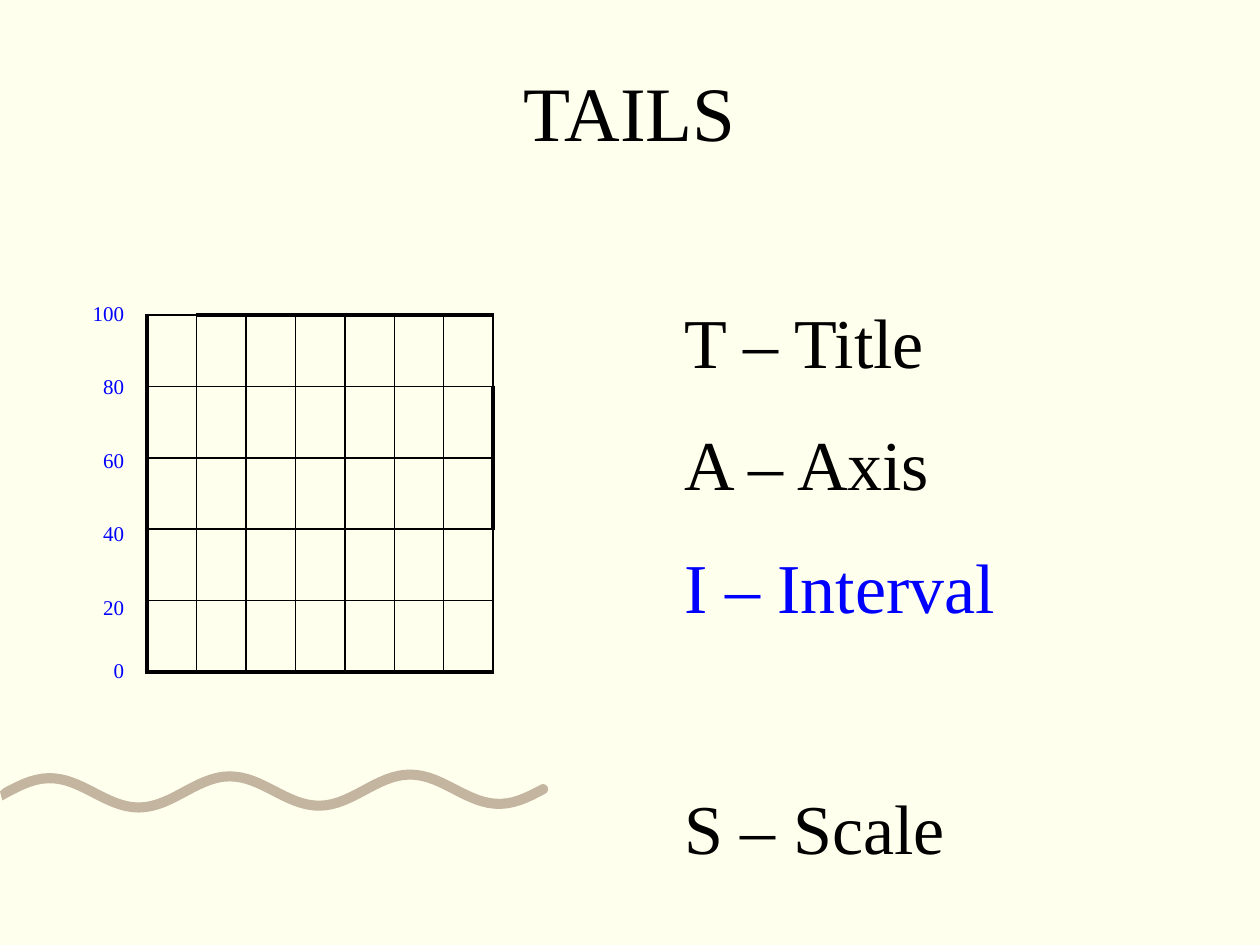
import math
from dataclasses import dataclass

from lxml import etree
from pptx import Presentation
from pptx.dml.color import RGBColor
from pptx.enum.text import MSO_ANCHOR, PP_ALIGN
from pptx.oxml.ns import qn
from pptx.util import Inches, Pt

CENTER, RIGHT = PP_ALIGN.CENTER, PP_ALIGN.RIGHT
MIDDLE = MSO_ANCHOR.MIDDLE


@dataclass(frozen=True)
class Theme:
    font: str = "Times New Roman"
    paper: str = "FFFFEE"
    ink: str = "000000"
    accent: str = "0000FF"
    wave: str = "C3B59F"
    title: int = 44
    body: int = 40
    label: int = 12
    thin: float = 1
    thick: float = 2.25


theme = Theme()
prs = Presentation()
prs.slide_width, prs.slide_height = Inches(10), Inches(7.5)
COLUMN, ROW = prs.slide_width / 120, prs.slide_height / 90


def grid(left, top, width, height):
    return (round(left * COLUMN), round(top * ROW),
            round(width * COLUMN), round(height * ROW))


def style(paragraph, size, color):
    paragraph.font.name = theme.font
    paragraph.font.size = Pt(size)
    paragraph.font.color.rgb = RGBColor.from_string(color)


slide = prs.slides.add_slide(prs.slide_layouts[5])
slide.background.fill.solid()
slide.background.fill.fore_color.rgb = RGBColor.from_string(theme.paper)

title = slide.shapes.title
title.left, title.top, title.width, title.height = grid(9, 3, 102, 15)
title.text_frame.text = "TAILS"
title.text_frame.vertical_anchor = MIDDLE
title.text_frame.paragraphs[0].alignment = CENTER
style(title.text_frame.paragraphs[0], theme.title, theme.ink)

CREST, PERIOD, SWING, HALF_BAND, WAVE_END = 0.39, 1.43, 0.12, 0.04, 4.31
upper, lower = [], []
STEPS = 90
for step in range(STEPS + 1):
    x = WAVE_END * step / STEPS
    phase = math.tau * (x - CREST) / PERIOD
    y = 6.3 - 0.01 * x - SWING * math.cos(phase)
    slope = math.atan(SWING * math.tau / PERIOD * math.sin(phase))
    dx, dy = HALF_BAND * math.sin(slope), HALF_BAND * math.cos(slope)
    upper.append((max(0, x + dx), y - dy))
    lower.append((max(0, x - dx), y + dy))
cap = [(x + HALF_BAND * math.cos(slope + turn), y + HALF_BAND * math.sin(slope + turn))
       for turn in (math.pi * (i / 8 - 0.5) for i in range(1, 8))]
outline = [(Inches(px), Inches(py)) for px, py in upper + cap + lower[::-1]]
builder = slide.shapes.build_freeform(*outline[0])
builder.add_line_segments(outline[1:], close=True)
wave = builder.convert_to_shape()
wave.shadow.inherit = False
wave.fill.solid()
wave.fill.fore_color.rgb = RGBColor.from_string(theme.wave)
wave.line.fill.background()

LINE_GAP, SKIPPED_LINE = 22, 68
entries = [
    ("T – Title", theme.ink, 0),
    ("A – Axis", theme.ink, LINE_GAP),
    ("I – Interval", theme.accent, LINE_GAP),
    ("S – Scale", theme.ink, LINE_GAP + SKIPPED_LINE),
]
acronym = slide.shapes.add_textbox(*grid(64, 27.8, 49, 57)).text_frame
acronym.word_wrap = True
for index, (text, color, gap) in enumerate(entries):
    paragraph = acronym.add_paragraph() if index else acronym.paragraphs[0]
    paragraph.text = text
    paragraph.space_before = Pt(gap)
    style(paragraph, theme.body, color)

GRAPH_ROWS, GRAPH_COLUMNS = 5, 7
graph = slide.shapes.add_table(GRAPH_ROWS, GRAPH_COLUMNS, *grid(14, 30, 33, 34)).table
graph.first_row = graph.horz_banding = False
for r in range(GRAPH_ROWS):
    for c in range(GRAPH_COLUMNS):
        cell = graph.cell(r, c)
        cell.fill.background()
        heavy = {
            "a:lnL": c == 0,
            "a:lnR": c == GRAPH_COLUMNS - 1 and r in (1, 2),
            "a:lnT": r == 0 and c > 0,
            "a:lnB": r == GRAPH_ROWS - 1,
        }
        properties = cell._tc.get_or_add_tcPr()
        for position, (side, is_heavy) in enumerate(heavy.items()):
            border = etree.Element(qn(side), w=str(Pt(theme.thick if is_heavy else theme.thin)))
            solid = etree.SubElement(border, qn("a:solidFill"))
            etree.SubElement(solid, qn("a:srgbClr"), val=theme.ink)
            properties.insert(position, border)

for value, top in zip(range(100, -1, -20), (28, 35, 42, 49, 56, 62)):
    label = slide.shapes.add_textbox(*grid(6, top, 7, 3.6)).text_frame
    label.word_wrap = True
    label.text = str(value)
    label.paragraphs[0].alignment = RIGHT
    style(label.paragraphs[0], theme.label, theme.accent)

prs.save("out.pptx")
